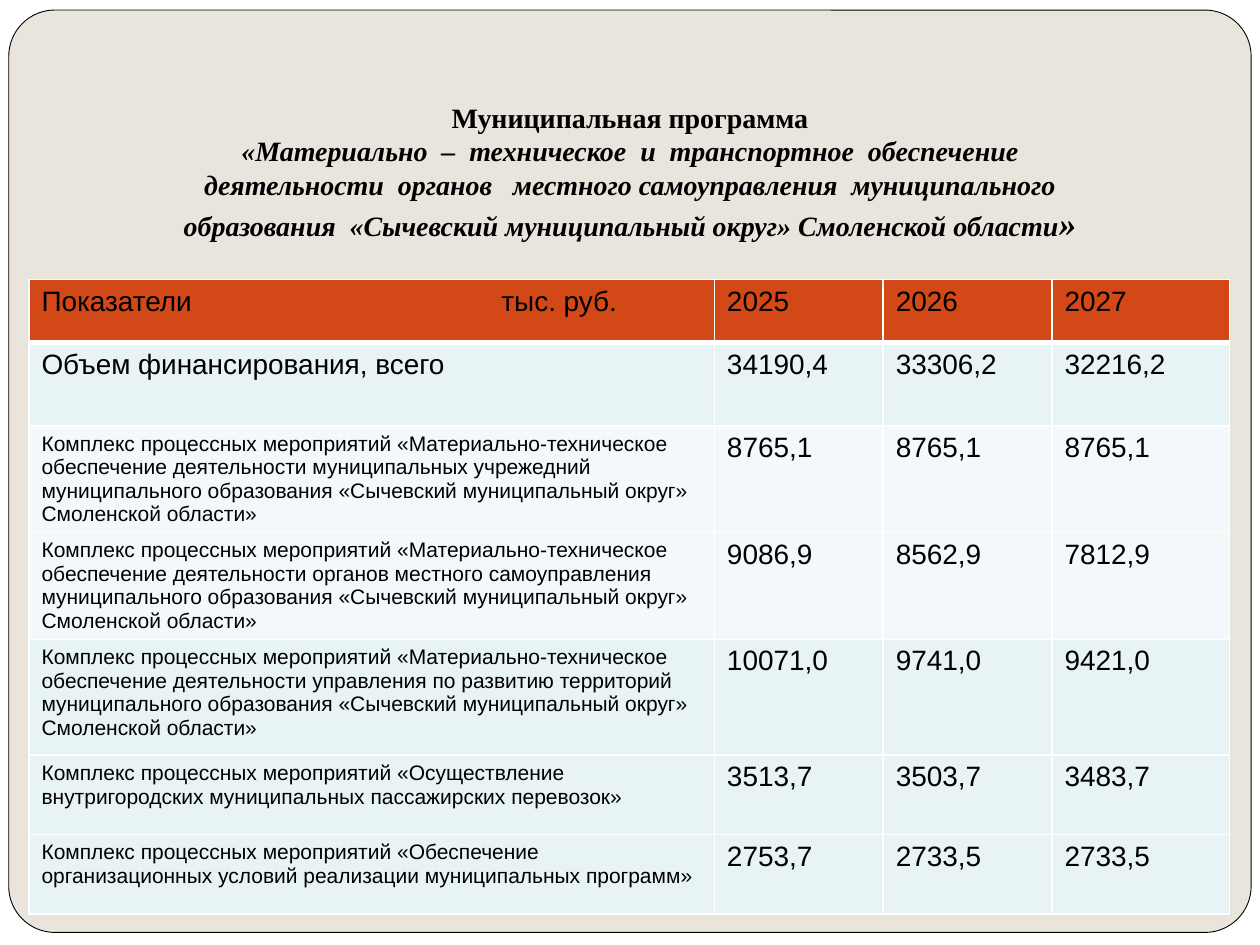
from lxml.etree import SubElement
from pptx import Presentation
from pptx.dml.color import RGBColor
from pptx.enum.shapes import MSO_SHAPE
from pptx.enum.text import MSO_ANCHOR, MSO_AUTO_SIZE, PP_ALIGN
from pptx.oxml.ns import qn
from pptx.util import Inches, Pt

BLACK = RGBColor(0x00, 0x00, 0x00)
WHITE = RGBColor(0xFF, 0xFF, 0xFF)
SAND = RGBColor(0xE9, 0xE5, 0xDC)
ORANGE = RGBColor(0xD3, 0x48, 0x17)
PALE_TEAL = RGBColor(0xE7, 0xF3, 0xF4)
LIGHT_TEAL = RGBColor(0xF3, 0xF9, 0xFA)

TITLE_LINES = [
    "Муниципальная программа",
    "«Материально  –  техническое  и  транспортное  обеспечение",
    "деятельности  органов   местного самоуправления  муниципального",
    "образования  «Сычевский муниципальный округ» Смоленской области",
]

MEASURES = "Комплекс процессных мероприятий "
SUPPORT = MEASURES + "«Материально-техническое обеспечение деятельности "
DISTRICT = " муниципального образования «Сычевский муниципальный округ» Смоленской области»"

# Row height, fill, label size, texts
BUDGET_ROWS = [
    (0.5, ORANGE, 16, ["Показатели\tтыс. руб.", "2025", "2026", "2027"]),
    (0.66, PALE_TEAL, 16,
     ["Объем финансирования, всего", "34190,4", "33306,2", "32216,2"]),
    (0.74, LIGHT_TEAL, 12,
     [SUPPORT + "муниципальных учрежедний" + DISTRICT, "8765,1", "8765,1", "8765,1"]),
    (0.74, LIGHT_TEAL, 12,
     [SUPPORT + "органов местного самоуправления" + DISTRICT,
      "9086,9", "8562,9", "7812,9"]),
    (0.92, PALE_TEAL, 12,
     [SUPPORT + "управления по развитию территорий" + DISTRICT,
      "10071,0", "9741,0", "9421,0"]),
    (0.63, PALE_TEAL, 12,
     [MEASURES + "«Осуществление внутригородских муниципальных пассажирских перевозок»",
      "3513,7", "3503,7", "3483,7"]),
    (0.63, PALE_TEAL, 12,
     [MEASURES + "«Обеспечение организационных условий реализации муниципальных программ»",
      "2753,7", "2733,5", "2733,5"]),
]
COLUMN_WIDTHS = [5.44, 1.34, 1.34, 1.41]
UNIT_TAB = 3.65


class SlideBuilder:
    title_font = "Times New Roman"
    table_font = "Arial"
    text_size = 16

    def __init__(self, slide):
        self.slide = slide

    def panel(self, kind, left, top, width, height, fill, line=None):
        panel = self.slide.shapes.add_shape(
            kind, Inches(left), Inches(top), Inches(width), Inches(height))
        panel.shadow.inherit = False
        panel.fill.solid()
        panel.fill.fore_color.rgb = fill
        if line is None:
            panel.line.fill.background()
        else:
            panel.line.color.rgb = line
            panel.line.width = Pt(0.5)
        return panel

    def style(self, run, font, size, bold=False, italic=False):
        run.font.name = font
        run.font.size = Pt(size)
        run.font.bold = bold
        run.font.italic = italic
        run.font.color.rgb = BLACK

    def title(self, lines, closing, left, top, width, height):
        title = self.slide.shapes.title
        # Bring the title in front of the panels
        title.element.getparent().append(title.element)
        title.left, title.top = Inches(left), Inches(top)
        title.width, title.height = Inches(width), Inches(height)
        frame = title.text_frame
        frame.auto_size = MSO_AUTO_SIZE.NONE
        frame.word_wrap = True
        frame.vertical_anchor = MSO_ANCHOR.BOTTOM
        frame.margin_bottom = Inches(0.1)
        heading = frame.paragraphs[0]
        heading.text = "\v".join(lines)
        heading.alignment = PP_ALIGN.CENTER
        for index, run in enumerate(heading.runs):
            self.style(run, self.title_font, self.text_size, True, index > 0)
        closing_quote = heading.add_run()
        closing_quote.text = closing
        self.style(closing_quote, self.title_font, 20, True, True)

    def borders(self, cell, top, bottom):
        properties = cell._tc.get_or_add_tcPr()
        widths = {"a:lnL": 1, "a:lnR": 1, "a:lnT": top, "a:lnB": bottom}
        for index, (side, width) in enumerate(widths.items()):
            border = properties.makeelement(qn(side), {"w": str(Pt(width))})
            properties.insert(index, border)
            solid = SubElement(border, qn("a:solidFill"))
            SubElement(solid, qn("a:srgbClr"), val=str(WHITE))

    def tab_stop(self, paragraph, position):
        stops = SubElement(paragraph._p.get_or_add_pPr(), qn("a:tabLst"))
        SubElement(stops, qn("a:tab"), pos=str(Inches(position)), algn="l")

    def table(self, rows, widths, left, top):
        height = sum(row[0] for row in rows)
        table = self.slide.shapes.add_table(
            len(rows), len(widths), Inches(left), Inches(top),
            Inches(sum(widths)), Inches(height)).table
        for column, width in zip(table.columns, widths):
            column.width = Inches(width)
        for index, (row, (height, fill, label_size, texts)) in enumerate(
                zip(table.rows, rows)):
            row.height = Inches(height)
            for column, (cell, text) in enumerate(zip(row.cells, texts)):
                cell.fill.solid()
                cell.fill.fore_color.rgb = fill
                # Thick rule under the header row
                self.borders(cell, 3 if index == 1 else 1, 3 if index == 0 else 1)
                paragraph = cell.text_frame.paragraphs[0]
                paragraph.text = text
                size = label_size if column == 0 else self.text_size
                for run in paragraph.runs:
                    self.style(run, self.table_font, size)
        return table


def main():
    deck = Presentation()
    deck.slide_width, deck.slide_height = Inches(10), Inches(7.5)
    slide = deck.slides.add_slide(deck.slide_layouts[5])
    builder = SlideBuilder(slide)

    # Background and rounded frame
    slide.background.fill.solid()
    slide.background.fill.fore_color.rgb = SAND
    builder.panel(MSO_SHAPE.RECTANGLE, 0, 0, 10, 7.5, WHITE)
    frame = builder.panel(
        MSO_SHAPE.ROUNDED_RECTANGLE, 0.07, 0.08, 9.86, 7.32, SAND, BLACK)
    frame.adjustments[0] = 0.05

    # Programme title
    builder.title(TITLE_LINES, "»", 0.5, 0.3, 9, 1.73)

    # Funding table
    budget = builder.table(BUDGET_ROWS, COLUMN_WIDTHS, 0.23, 2.22)
    builder.tab_stop(budget.cell(0, 0).text_frame.paragraphs[0], UNIT_TAB)

    deck.save("out.pptx")


if __name__ == "__main__":
    main()
